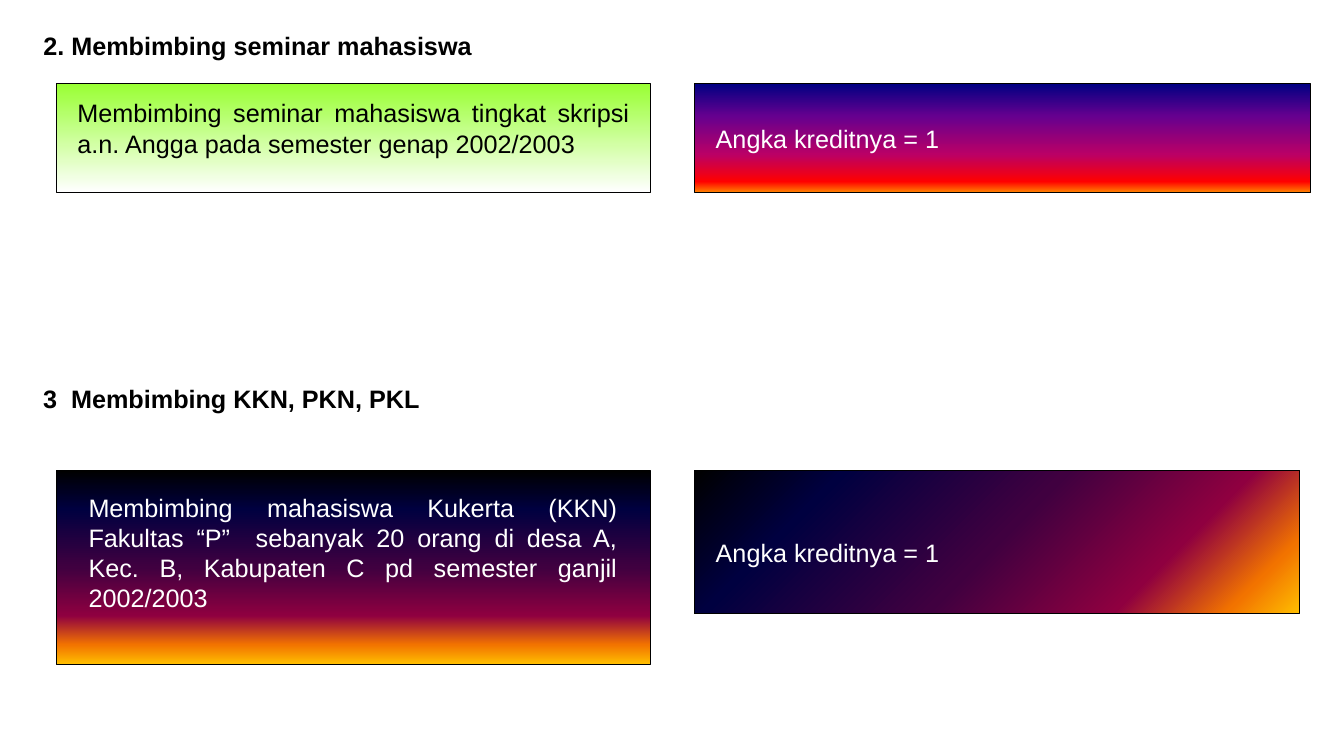
"""Build the slide on credit points for supervising student seminars and field work."""
import copy
import dataclasses

import pptx
import pptx.dml.color
import pptx.enum.shapes
import pptx.enum.text
import pptx.oxml.ns
import pptx.util

Inches = pptx.util.Inches
Align = pptx.enum.text.PP_ALIGN
Anchor = pptx.enum.text.MSO_ANCHOR
Box = tuple[float, float, float, float]
Stops = tuple[tuple[int, str], ...]

LIME: Stops = ((0, "99FF33"), (100, "FFFFFF"))
SUNSET: Stops = ((0, "000082"), (30, "66008F"), (65, "BA0066"), (90, "FF0000"), (100, "FF8200"))
NIGHTFALL: Stops = ((0, "000000"), (20, "000040"), (50, "400040"), (75, "8F0040"),
                    (90, "F27300"), (100, "FFBF00"))


@dataclasses.dataclass(frozen=True)
class Panel:
    box: Box
    stops: Stops
    text_box: Box
    text: str
    color: str = "FFFFFF"
    align: Align = Align.LEFT
    anchor: Anchor = Anchor.TOP
    clockwise: int = 90


CREDIT = "Angka kreditnya = 1"
SEMINAR_HEADING = "2. Membimbing seminar mahasiswa"
FIELDWORK_HEADING = "3  Membimbing KKN, PKN, PKL"
SEMINAR_PANELS = (
    Panel((0.56, 0.83, 5.89, 1.08), LIME, (0.67, 0.92, 5.67, 0.71),
          "Membimbing seminar mahasiswa tingkat skripsi a.n. Angga pada semester genap 2002/2003",
          color="000000", align=Align.JUSTIFY),
    Panel((6.89, 0.83, 6.11, 1.08), SUNSET, (7, 1.17, 5.89, 0.4), CREDIT),
)
FIELDWORK_PANELS = (
    Panel((0.56, 4.67, 5.89, 1.92), NIGHTFALL, (0.78, 4.83, 5.44, 1.31),
          "Membimbing mahasiswa Kukerta (KKN) Fakultas “P”  sebanyak 20 orang di desa A, "
          "Kec. B, Kabupaten C pd semester ganjil 2002/2003", align=Align.JUSTIFY),
    Panel((6.89, 4.67, 6, 1.42), NIGHTFALL, (7, 4.83, 5.78, 1.3), CREDIT,
          anchor=Anchor.MIDDLE, clockwise=45),
)


def rgb(color: str) -> pptx.dml.color.RGBColor:
    return pptx.dml.color.RGBColor.from_string(color)


def place(shape, box: Box) -> None:
    shape.left, shape.top, shape.width, shape.height = map(Inches, box)


def write(shape, text: str, *, color: str = "000000", bold: bool = False,
          align: Align = Align.LEFT, anchor: Anchor = Anchor.TOP) -> None:
    frame = shape.text_frame
    frame.word_wrap = True
    frame.auto_size = pptx.enum.text.MSO_AUTO_SIZE.NONE
    frame.vertical_anchor = anchor
    paragraph = frame.paragraphs[0]
    paragraph.alignment = align
    run = paragraph.add_run()
    run.text = text
    run.font.name = "Arial"
    run.font.size = pptx.util.Pt(18)
    run.font.bold = bold
    run.font.color.rgb = rgb(color)


def add_text(slide, box: Box, text: str, **text_format) -> None:
    write(slide.shapes.add_textbox(*map(Inches, box)), text, **text_format)


def fill_gradient(shape, stops: Stops, clockwise: int) -> None:
    shape.fill.gradient()
    shape.fill.gradient_angle = 360 - clockwise
    stop_list = shape._element.spPr.find(".//" + pptx.oxml.ns.qn("a:gsLst"))
    for _ in range(len(stops) - len(stop_list)):
        stop_list.append(copy.deepcopy(stop_list[0]))
    for stop, (percent, color) in zip(shape.fill.gradient_stops, stops):
        stop.position = percent / 100
        stop.color.rgb = rgb(color)


def add_panel(slide, panel: Panel) -> None:
    backdrop = slide.shapes.add_shape(
        pptx.enum.shapes.MSO_SHAPE.RECTANGLE, *map(Inches, panel.box))
    backdrop.shadow.inherit = False
    fill_gradient(backdrop, panel.stops, panel.clockwise)
    backdrop.line.color.rgb = rgb("000000")
    backdrop.line.width = pptx.util.Pt(0.75)
    add_text(slide, panel.text_box, panel.text, color=panel.color,
             align=panel.align, anchor=panel.anchor)


def main() -> None:
    deck = pptx.Presentation()
    deck.slide_width, deck.slide_height = Inches(13.33), Inches(7.5)
    slide = deck.slides.add_slide(deck.slide_layouts.get_by_name("Title Only"))
    seminar_title = slide.shapes.title
    place(seminar_title, (0.33, 0.25, 6.78, 0.4))
    write(seminar_title, SEMINAR_HEADING, bold=True)
    for panel in SEMINAR_PANELS:
        add_panel(slide, panel)
    add_text(slide, (0.33, 3.75, 12.67, 0.4), FIELDWORK_HEADING, bold=True)
    for panel in FIELDWORK_PANELS:
        add_panel(slide, panel)
    deck.save("out.pptx")


if __name__ == "__main__":
    main()
